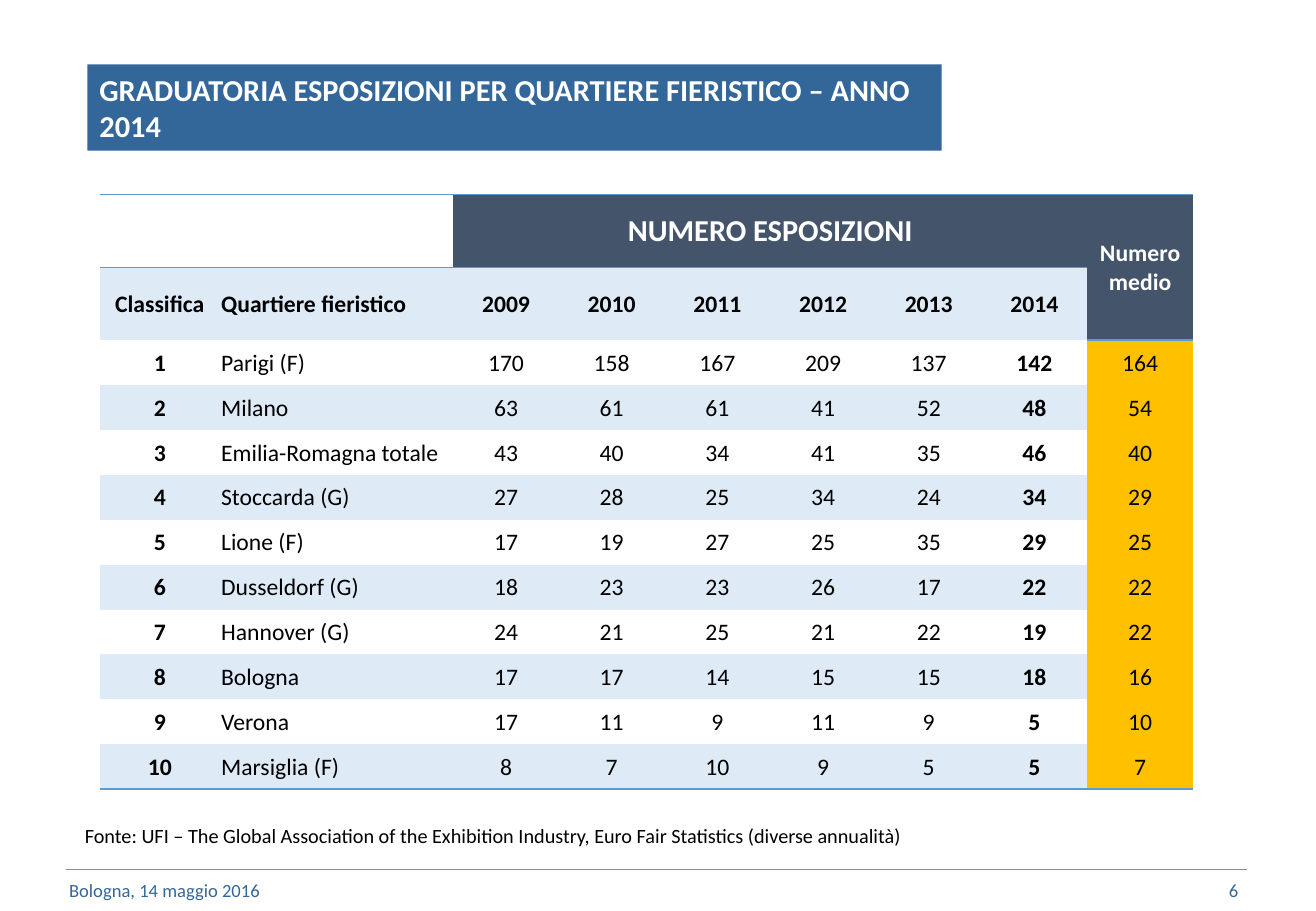
from lxml.etree import SubElement
from pptx import Presentation
from pptx.dml.color import RGBColor
from pptx.enum.shapes import MSO_CONNECTOR, MSO_SHAPE
from pptx.enum.text import MSO_ANCHOR as Anchor, PP_ALIGN as Align
from pptx.oxml import parse_xml
from pptx.oxml.ns import nsdecls, qn
from pptx.util import Pt

PX = 9144
FONT = "Calibri"
NO_GRID_STYLE = "{2D5ABB26-0587-4C30-8999-92F81FD0307C}"
COLORS = {
    "title": "336699",
    "rule": "5B9BD5",
    "header": "44546A",
    "band": "DEEBF7",
    "average": "FFC000",
    "white": "FFFFFF",
    "black": "000000",
}
COLUMN_WIDTHS = [99, 192] + [87] * 7
ROW_HEIGHTS = [60] * 2 + [37] * 10
LAST_YEAR, AVERAGE = 7, 8
HEADINGS = ["Classifica", "Quartiere fieristico", *range(2009, 2015)]
RANKING = [
    ("Parigi (F)", 170, 158, 167, 209, 137, 142, 164),
    ("Milano", 63, 61, 61, 41, 52, 48, 54),
    ("Emilia-Romagna totale", 43, 40, 34, 41, 35, 46, 40),
    ("Stoccarda (G)", 27, 28, 25, 34, 24, 34, 29),
    ("Lione (F)", 17, 19, 27, 25, 35, 29, 25),
    ("Dusseldorf (G)", 18, 23, 23, 26, 17, 22, 22),
    ("Hannover (G)", 24, 21, 25, 21, 22, 19, 22),
    ("Bologna", 17, 17, 14, 15, 15, 18, 16),
    ("Verona", 17, 11, 9, 11, 9, 5, 10),
    ("Marsiglia (F)", 8, 7, 10, 9, 5, 5, 7),
]


def px(*lengths):
    """Turn whole px into EMU."""
    return [length * PX for length in lengths]


def rgb(color):
    """Look up a named colour."""
    return RGBColor.from_string(COLORS[color])


def write(frame, text, size, color, bold=False, align=Align.LEFT):
    """Put one formatted paragraph into a text frame."""
    frame.text = text
    paragraph = frame.paragraphs[0]
    paragraph.alignment = align
    for run in paragraph.runs:
        run.font.name = FONT
        run.font.size = Pt(size)
        run.font.bold = bold
        run.font.color.rgb = rgb(color)


def add_label(slide, box, text, size, color, align=Align.LEFT, anchor=Anchor.MIDDLE):
    """Add a wrapping text box."""
    frame = slide.shapes.add_textbox(*px(*box)).text_frame
    frame.word_wrap = True
    frame.vertical_anchor = anchor
    write(frame, text, size, color, align=align)


def add_title(slide, box, text):
    """Add the title on its coloured bar."""
    bar = slide.shapes.add_shape(MSO_SHAPE.RECTANGLE, *px(*box))
    bar.shadow.inherit = False
    bar.fill.solid()
    bar.fill.fore_color.rgb = rgb("title")
    bar.line.fill.background()
    bar.text_frame.word_wrap = True
    bar.text_frame.vertical_anchor = Anchor.MIDDLE
    write(bar.text_frame, text, 18, "white", bold=True)


def add_rule(slide, left, right, y):
    """Add the thin footer rule."""
    rule = slide.shapes.add_connector(MSO_CONNECTOR.STRAIGHT, *px(left, y, right, y))
    rule.line.color.rgb = rgb("rule")
    rule.line.width = Pt(0.25)
    SubElement(rule._element.spPr, qn("a:effectLst"))


def add_borders(cell, sides):
    """Draw one-point borders on the given sides of a cell."""
    properties = cell._tc.get_or_add_tcPr()
    for side in sides:
        properties.append(parse_xml(
            f'<a:ln{side} {nsdecls("a")} w="{Pt(1)}"><a:solidFill>'
            f'<a:srgbClr val="{COLORS["rule"]}"/></a:solidFill></a:ln{side}>'))


def style_cell(cell, fill, sides):
    """Set a cell's borders, fill, margins and anchor."""
    add_borders(cell, sides)
    if fill:
        cell.fill.solid()
        cell.fill.fore_color.rgb = rgb(fill)
    else:
        cell.fill.background()
    cell.margin_left = cell.margin_right = cell.margin_top = PX
    cell.margin_bottom = 0
    cell.vertical_anchor = Anchor.MIDDLE


def cell_fill(row, column):
    """Give the fill colour name for a place in the ranking table."""
    if column == AVERAGE:
        return "header" if row < 2 else "average"
    if row == 0:
        return "header" if column > 1 else None
    return "band" if row % 2 else None


def add_ranking(slide, left, top):
    """Add the table of exhibitions by fairground and year."""
    rows = [["", "", "NUMERO ESPOSIZIONI", *[""] * 5, "Numero medio"], HEADINGS + [""]]
    rows += [[rank, *values] for rank, values in enumerate(RANKING, 1)]
    box = px(left, top, sum(COLUMN_WIDTHS), sum(ROW_HEIGHTS))
    table = slide.shapes.add_table(len(rows), len(COLUMN_WIDTHS), *box).table
    table.first_row = table.horz_banding = False
    table._tbl.tblPr.find(qn("a:tableStyleId")).text = NO_GRID_STYLE
    for column, width in zip(table.columns, px(*COLUMN_WIDTHS)):
        column.width = width
    for row, height in zip(table.rows, px(*ROW_HEIGHTS)):
        row.height = height
    table.cell(0, 2).merge(table.cell(0, LAST_YEAR))
    table.cell(0, AVERAGE).merge(table.cell(1, AVERAGE))

    borders = {0: "TB", len(rows) - 1: "B"}
    for r, values in enumerate(rows):
        for c, value in enumerate(values):
            cell = table.cell(r, c)
            fill = cell_fill(r, c)
            style_cell(cell, fill, borders.get(r, ""))
            if value != "":
                write(cell.text_frame, str(value),
                      size=18 if (r, c) == (0, 2) else 14,
                      color="white" if fill == "header" else "black",
                      bold=r < 2 or c in (0, LAST_YEAR),
                      align=Align.LEFT if c == 1 else Align.CENTER)


def main():
    """Build and save the slide."""
    deck = Presentation()
    deck.slide_width, deck.slide_height = px(1083, 750)
    slide = deck.slides.add_slide(deck.slide_layouts[6])
    add_rule(slide, 54, 1026, 716)
    add_label(slide, (47, 716, 271, 34), "Bologna, 14 maggio 2016", 11, "title")
    add_label(slide, (776, 713, 253, 40), "6", 11, "title", align=Align.RIGHT)
    add_title(slide, (72, 53, 703, 71),
              "GRADUATORIA ESPOSIZIONI PER QUARTIERE FIERISTICO – ANNO 2014")
    add_ranking(slide, 82, 160)
    add_label(slide, (60, 673, 906, 30),
              "Fonte: UFI – The Global Association of the Exhibition Industry, "
              "Euro Fair Statistics (diverse annualità)", 12, "black", anchor=Anchor.TOP)
    deck.save("out.pptx")


if __name__ == "__main__":
    main()
